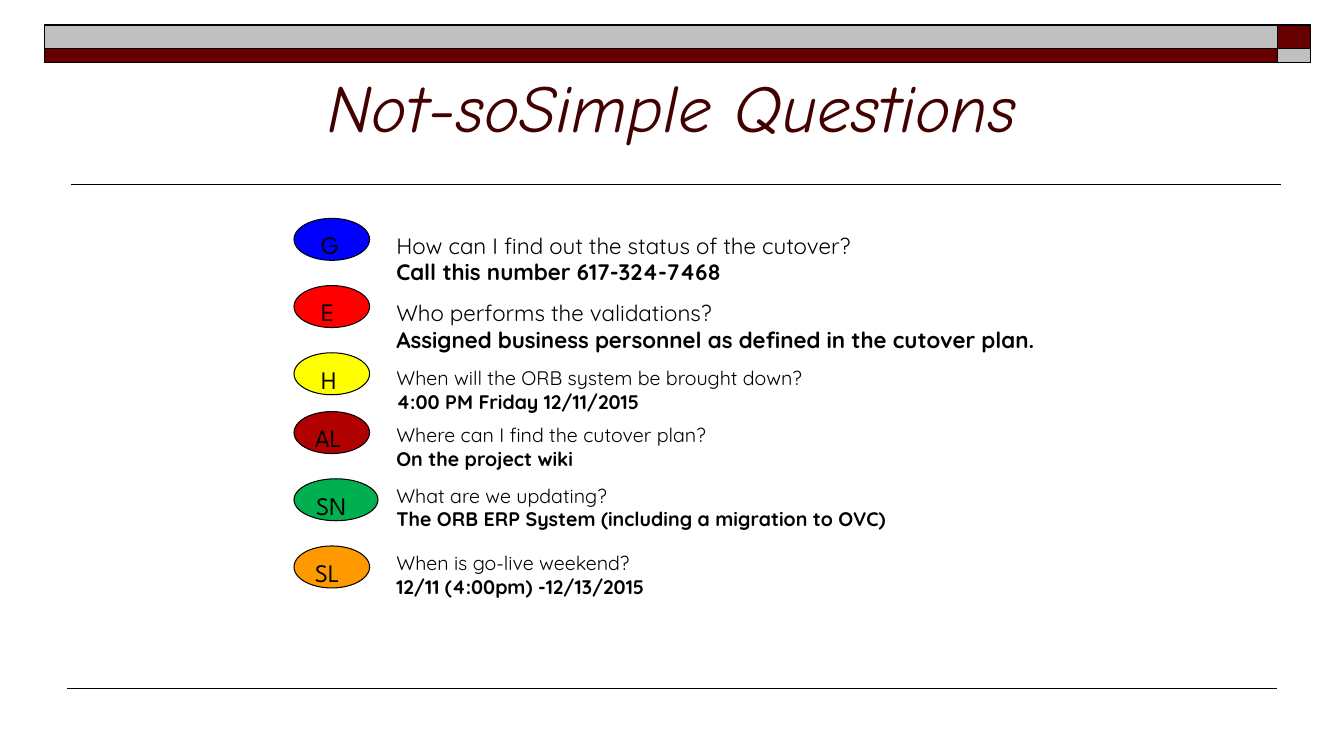
from collections import namedtuple

from lxml.etree import SubElement
from pptx import Presentation
from pptx.dml.color import RGBColor
from pptx.enum.shapes import MSO_CONNECTOR, MSO_SHAPE
from pptx.enum.text import MSO_ANCHOR, MSO_AUTO_SIZE, PP_ALIGN
from pptx.oxml.ns import qn
from pptx.util import Inches, Pt

BLACK = RGBColor(0x00, 0x00, 0x00)
MAROON = RGBColor(0x66, 0x00, 0x00)
SILVER = RGBColor(0xC0, 0xC0, 0xC0)
TITLE_COLOR = RGBColor(0x42, 0x00, 0x00)
BLUE = RGBColor(0x00, 0x00, 0xFF)
RED = RGBColor(0xFF, 0x00, 0x00)
YELLOW = RGBColor(0xFF, 0xFF, 0x00)
CRIMSON = RGBColor(0xB1, 0x00, 0x00)
GREEN = RGBColor(0x00, 0xB0, 0x50)
ORANGE = RGBColor(0xFF, 0x99, 0x00)

TITLE_FONT = "Comic Neue"
BADGE_FONT = "League Spartan"
BODY_FONT = "Quicksand"

# The slide is a grid of twelve units to the inch.
UNIT = Inches(1) / 12
BADGE_LEFT, BADGE_HEIGHT = 35, 5
TEXT_LEFT = 46

Card = namedtuple(
    "Card", "letters color top badge_width text_drop text_width size question answer")
CARDS = [
    Card("G", BLUE, 26, 9, 1, 74, 16,
         "How can I find out the status of the cutover?",
         "Call this number 617-324-7468"),
    Card("E", RED, 34, 9, 1, 88, 16,
         "Who performs the validations?",
         "Assigned business personnel as defined in the cutover plan."),
    Card("H", YELLOW, 42, 9, 1, 62, 14,
         "When will the ORB system be brought down?",
         "4:00 PM Friday 12/11/2015"),
    Card("AL", CRIMSON, 49, 9, 0.8, 85, 14,
         "Where can I find the cutover plan?",
         "On the project wiki"),
    Card("SN", GREEN, 57, 10, 0, 78, 14,
         "What are we updating?",
         "The ORB ERP System (including a migration to OVC)"),
    Card("SL", ORANGE, 65, 9, 0, 86, 14,
         "When is go-live weekend?",
         "12/11 (4:00pm) -12/13/2015"),
]


def units(*values):
    return [round(value * UNIT) for value in values]


def add_filled_shape(slide, kind, box, color, line_width):
    shape = slide.shapes.add_shape(kind, *box)
    shape.shadow.inherit = False
    shape.fill.solid()
    shape.fill.fore_color.rgb = color
    shape.line.color.rgb = BLACK
    shape.line.width = Pt(line_width)
    return shape


def add_rule(slide, left, right, top, line_width):
    rule = slide.shapes.add_connector(MSO_CONNECTOR.STRAIGHT, *units(left, top, right, top))
    rule.line.color.rgb = BLACK
    rule.line.width = Pt(line_width)
    SubElement(rule._element.spPr, qn("a:effectLst"))


def add_banner(slide, left, top, width, height):
    """Two stacked bars, each with an end block in the other bar's colour."""
    end_width = width * 0.026
    upper_height = height * 0.62
    columns = [(left, width - end_width), (left + width - end_width, end_width)]
    rows = [(top, upper_height), (top + upper_height, height - upper_height)]
    for row, (y, bar_height) in enumerate(rows):
        for column, (x, bar_width) in enumerate(columns):
            color = SILVER if row == column else MAROON
            add_filled_shape(slide, MSO_SHAPE.RECTANGLE,
                             units(x, y, bar_width, bar_height), color, 1)


def fill_title(slide, text, left, top, width, height):
    title = slide.shapes.title
    title.left, title.top, title.width, title.height = units(left, top, width, height)
    frame = title.text_frame
    frame.auto_size = MSO_AUTO_SIZE.NONE
    frame.vertical_anchor = MSO_ANCHOR.BOTTOM
    frame.text = text
    paragraph = frame.paragraphs[0]
    paragraph.alignment = PP_ALIGN.CENTER
    paragraph.font.name = TITLE_FONT
    paragraph.font.size = Pt(48)
    paragraph.font.italic = True
    paragraph.font.color.rgb = TITLE_COLOR


def style_text(paragraph, font_name, size, bold=False):
    paragraph.alignment = PP_ALIGN.LEFT
    paragraph.font.name = font_name
    paragraph.font.size = Pt(size)
    paragraph.font.bold = bold
    paragraph.font.color.rgb = BLACK


def add_badge(slide, card):
    box = units(BADGE_LEFT, card.top, card.badge_width, BADGE_HEIGHT)
    badge = add_filled_shape(slide, MSO_SHAPE.OVAL, box, card.color, 0.75)
    frame = badge.text_frame
    frame.vertical_anchor = MSO_ANCHOR.TOP
    frame.margin_left = Inches(0.16 if len(card.letters) == 1 else 0.1)
    frame.margin_right = 0
    frame.text = card.letters
    style_text(frame.paragraphs[0], BADGE_FONT, 18)


def add_question(slide, card):
    height = card.size * 0.48
    box = units(TEXT_LEFT, card.top + card.text_drop, card.text_width, height)
    frame = slide.shapes.add_textbox(*box).text_frame
    frame.word_wrap = True
    frame.auto_size = MSO_AUTO_SIZE.SHAPE_TO_FIT_TEXT
    frame.text = f"{card.question}\n{card.answer}"
    question, answer = frame.paragraphs
    style_text(question, BODY_FONT, card.size)
    style_text(answer, BODY_FONT, card.size, bold=True)


def build_question_slide(presentation):
    slide = presentation.slides.add_slide(presentation.slide_layouts[5])
    add_rule(slide, 8.4, 152.5, 22, 1)
    add_banner(slide, 5.3, 3, 150.7, 4.45)
    add_rule(slide, 8, 152, 82, 0.75)
    fill_title(slide, "Not-soSimple Questions", 26, 3, 108, 15)
    for card in CARDS:
        add_badge(slide, card)
        add_question(slide, card)


def main():
    presentation = Presentation()
    presentation.slide_width, presentation.slide_height = units(160, 90)
    build_question_slide(presentation)
    presentation.save("out.pptx")


if __name__ == "__main__":
    main()
